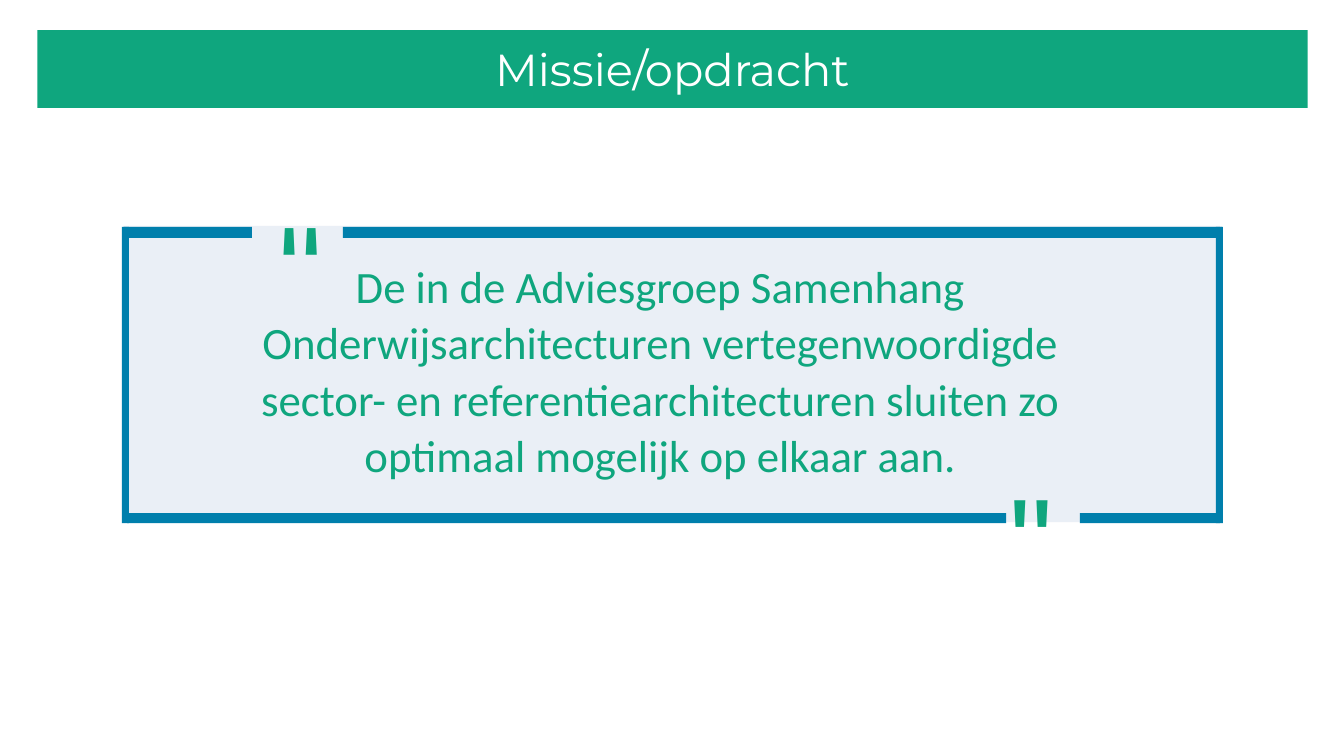
import pptx
import pptx.dml.color
import pptx.enum.text
import pptx.util

PX = 9144  # 100 px to the inch
GREEN, BLUE, PALE, WHITE = "0FA67E", "007FAC", "EAEFF6", "FFFFFF"
CENTER = pptx.enum.text.PP_ALIGN.CENTER
LEFT = pptx.enum.text.PP_ALIGN.LEFT

# left, top, width, height of the frame pieces around the quote
FRAME_BARS = [
    (123, 225, 127, 11),
    (340, 225, 872, 11),
    (126, 509, 872, 10),
    (1071, 509, 139, 10),
    (121, 225, 7, 294),
    (1206, 225, 7, 294),
]

MISSION = (
    "De in de Adviesgroep Samenhang Onderwijsarchitecturen vertegenwoordigde "
    "sector- en referentiearchitecturen sluiten zo optimaal mogelijk op elkaar aan."
)


def px(*lengths):
    return [pptx.util.Emu(length * PX) for length in lengths]


def color(hex_text):
    return pptx.dml.color.RGBColor.from_string(hex_text)


def paint(shape, fill):
    shape.fill.solid()
    shape.fill.fore_color.rgb = color(fill)


def write(shape, text, font, size, ink, align):
    """Put one formatted paragraph in the shape and return it."""
    frame = shape.text_frame
    frame.text = text
    frame.word_wrap = True
    frame.auto_size = pptx.enum.text.MSO_AUTO_SIZE.NONE
    para = frame.paragraphs[0]
    para.alignment = align
    for span in para.runs:
        span.font.name = font
        span.font.size = pptx.util.Pt(size)
        span.font.color.rgb = color(ink)
    return para


def add_title(page, text):
    title = page.shapes.title
    title.left, title.top, title.width, title.height = px(37, 30, 1260, 77)
    paint(title, GREEN)
    write(title, text, "Montserrat", 32, WHITE, CENTER)
    frame = title.text_frame
    frame.vertical_anchor = pptx.enum.text.MSO_ANCHOR.MIDDLE
    frame.margin_left = frame.margin_right = px(10)[0]
    frame.margin_top = frame.margin_bottom = px(10)[0]


def add_block(group, area, fill):
    block = group.shapes.add_shape(
        pptx.enum.shapes.MSO_SHAPE.RECTANGLE, *px(*area))
    block.shadow.inherit = False
    paint(block, fill)
    block.line.fill.background()


def add_text(group, area, text, font, size, align, spacing, rotation=0):
    box = group.shapes.add_textbox(*px(*area))
    box.rotation = rotation
    para = write(box, text, font, size, GREEN, align)
    para.line_spacing = spacing
    para.space_after = pptx.util.Pt(10)


def main():
    deck = pptx.Presentation()
    deck.slide_width, deck.slide_height = px(1333, 750)
    page = deck.slides.add_slide(deck.slide_layouts[5])
    add_title(page, "Missie/opdracht")

    quote = page.shapes.add_group_shape()
    add_block(quote, (122, 224, 1088, 294), PALE)
    add_text(quote, (206, 249, 898, 299), MISSION, "Calibri", 32, CENTER, 1.05)
    for bar in FRAME_BARS:
        add_block(quote, bar, BLUE)
    add_text(quote, (991, 432, 79, 139), '"', "Arial", 88, LEFT, 1.15)
    add_text(quote, (251, 179, 79, 139), '"', "Arial", 88, LEFT, 1.15, 180)

    deck.save("out.pptx")


if __name__ == "__main__":
    main()
